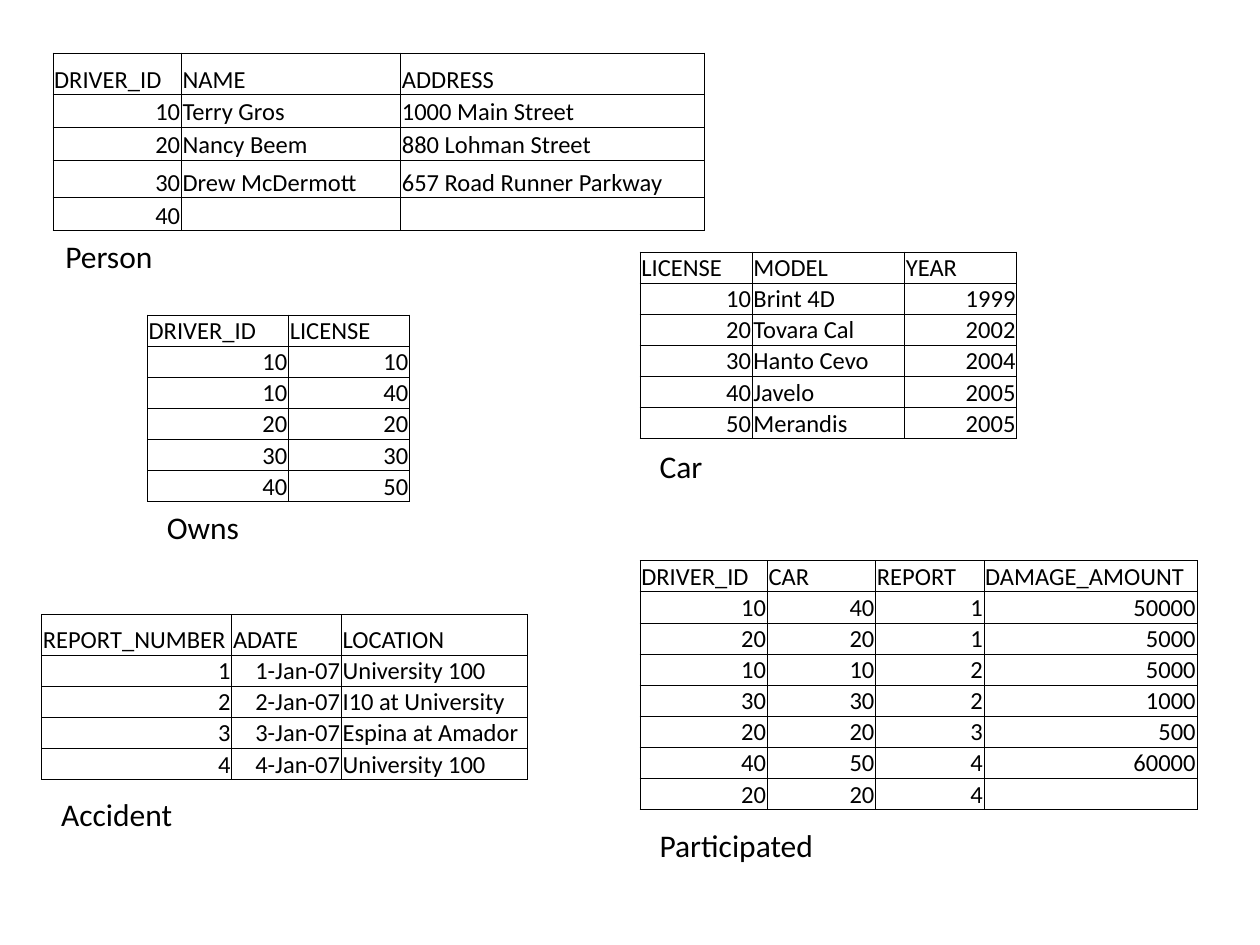
from lxml.etree import SubElement
from pptx import Presentation
from pptx.dml.color import RGBColor
from pptx.enum.text import MSO_ANCHOR, MSO_AUTO_SIZE, PP_ALIGN
from pptx.oxml.ns import qn
from pptx.util import Inches, Pt

BLACK = RGBColor(0x00, 0x00, 0x00)
BLANK_LAYOUT = 6

PERSON = [
    ("DRIVER_ID", "NAME", "ADDRESS"),
    ("10", "Terry Gros", "1000 Main Street"),
    ("20", "Nancy Beem", "880 Lohman Street"),
    ("30", "Drew McDermott", "657 Road Runner Parkway"),
    ("40", "", ""),
]
OWNS = [
    ("DRIVER_ID", "LICENSE"),
    ("10", "10"),
    ("10", "40"),
    ("20", "20"),
    ("30", "30"),
    ("40", "50"),
]
CAR = [
    ("LICENSE", "MODEL", "YEAR"),
    ("10", "Brint 4D", "1999"),
    ("20", "Tovara Cal", "2002"),
    ("30", "Hanto Cevo", "2004"),
    ("40", "Javelo", "2005"),
    ("50", "Merandis", "2005"),
]
ACCIDENT = [
    ("REPORT_NUMBER", "ADATE", "LOCATION"),
    ("1", "1-Jan-07", "University 100"),
    ("2", "2-Jan-07", "I10 at University"),
    ("3", "3-Jan-07", "Espina at Amador"),
    ("4", "4-Jan-07", "University 100"),
]
PARTICIPATED = [
    ("DRIVER_ID", "CAR", "REPORT", "DAMAGE_AMOUNT"),
    ("10", "40", "1", "50000"),
    ("20", "20", "1", "5000"),
    ("10", "10", "2", "5000"),
    ("30", "30", "2", "1000"),
    ("20", "20", "3", "500"),
    ("40", "50", "4", "60000"),
    ("20", "20", "4", ""),
]


class SlideBuilder:
    font_name = "Calibri"
    cell_size = Pt(14)
    label_size = Pt(18)
    border_width = Pt(0.5)
    cell_margin = Inches(0.01)

    def __init__(self, slide):
        self.slide = slide

    def add_text(self, paragraph, text, size):
        run = paragraph.add_run()
        run.text = text
        run.font.name = self.font_name
        run.font.size = size
        run.font.color.rgb = BLACK

    def add_borders(self, cell):
        properties = cell._tc.get_or_add_tcPr()
        for side in ("lnL", "lnR", "lnT", "lnB"):
            line = SubElement(properties, qn(f"a:{side}"), w=str(self.border_width))
            fill = SubElement(line, qn("a:solidFill"))
            SubElement(fill, qn("a:srgbClr"), val=str(BLACK))

    def format_cell(self, cell, text, alignment):
        self.add_borders(cell)
        cell.fill.background()
        cell.vertical_anchor = MSO_ANCHOR.BOTTOM
        cell.margin_left = cell.margin_right = cell.margin_top = self.cell_margin
        cell.margin_bottom = 0
        paragraph = cell.text_frame.paragraphs[0]
        paragraph.alignment = alignment
        if text:
            self.add_text(paragraph, text, self.cell_size)
        else:
            # The end mark keeps an empty cell as low as its row
            SubElement(paragraph._p, qn("a:endParaRPr"),
                       sz=str(int(self.cell_size.pt * 100)))

    def add_table(self, left, top, widths, heights, rows, right_columns):
        """Add a grid whose body cells in right_columns are right-aligned."""
        table = self.slide.shapes.add_table(
            len(rows), len(widths), Inches(left), Inches(top),
            Inches(sum(widths)), Inches(sum(heights))).table
        table.first_row = table.horz_banding = False
        for column, width in zip(table.columns, widths):
            column.width = Inches(width)
        for row, height in zip(table.rows, heights):
            row.height = Inches(height)
        for row_index, values in enumerate(rows):
            for column_index, text in enumerate(values):
                is_right = row_index > 0 and column_index in right_columns
                self.format_cell(table.cell(row_index, column_index), text,
                                 PP_ALIGN.RIGHT if is_right else PP_ALIGN.LEFT)

    def add_label(self, left, top, width, text):
        box = self.slide.shapes.add_textbox(
            Inches(left), Inches(top), Inches(width), Inches(0.4))
        box.text_frame.word_wrap = False
        box.text_frame.auto_size = MSO_AUTO_SIZE.SHAPE_TO_FIT_TEXT
        self.add_text(box.text_frame.paragraphs[0], text, self.label_size)


def main():
    presentation = Presentation()
    presentation.slide_width = Inches(10)
    presentation.slide_height = Inches(7.5)
    layout = presentation.slide_layouts[BLANK_LAYOUT]
    builder = SlideBuilder(presentation.slides.add_slide(layout))

    builder.add_table(0.33, 4.88, [1.51, 0.87, 1.48],
                      [0.32, 0.24, 0.24, 0.23, 0.24], ACCIDENT, {0, 1})
    builder.add_table(0.42, 0.42, [1.02, 1.74, 2.41],
                      [0.33, 0.26, 0.26, 0.3, 0.26], PERSON, {0})
    builder.add_table(1.17, 2.5, [1.12, 0.96], [0.21] * len(OWNS), OWNS, {0, 1})
    builder.add_table(5.08, 4.45, [1.01, 0.86, 0.86, 1.69],
                      [0.21] * len(PARTICIPATED), PARTICIPATED, {0, 1, 2, 3})
    builder.add_table(5.08, 2, [0.89, 1.21, 0.89], [0.19] * len(CAR), CAR, {0, 2})

    builder.add_label(0.42, 1.83, 0.9, "Person")
    builder.add_label(1.17, 3.98, 0.84, " Owns")
    builder.add_label(5.08, 3.5, 0.6, " Car")
    builder.add_label(0.33, 6.26, 1.15, " Accident")
    builder.add_label(5.08, 6.51, 1.49, " Participated")

    presentation.save("out.pptx")


if __name__ == "__main__":
    main()
